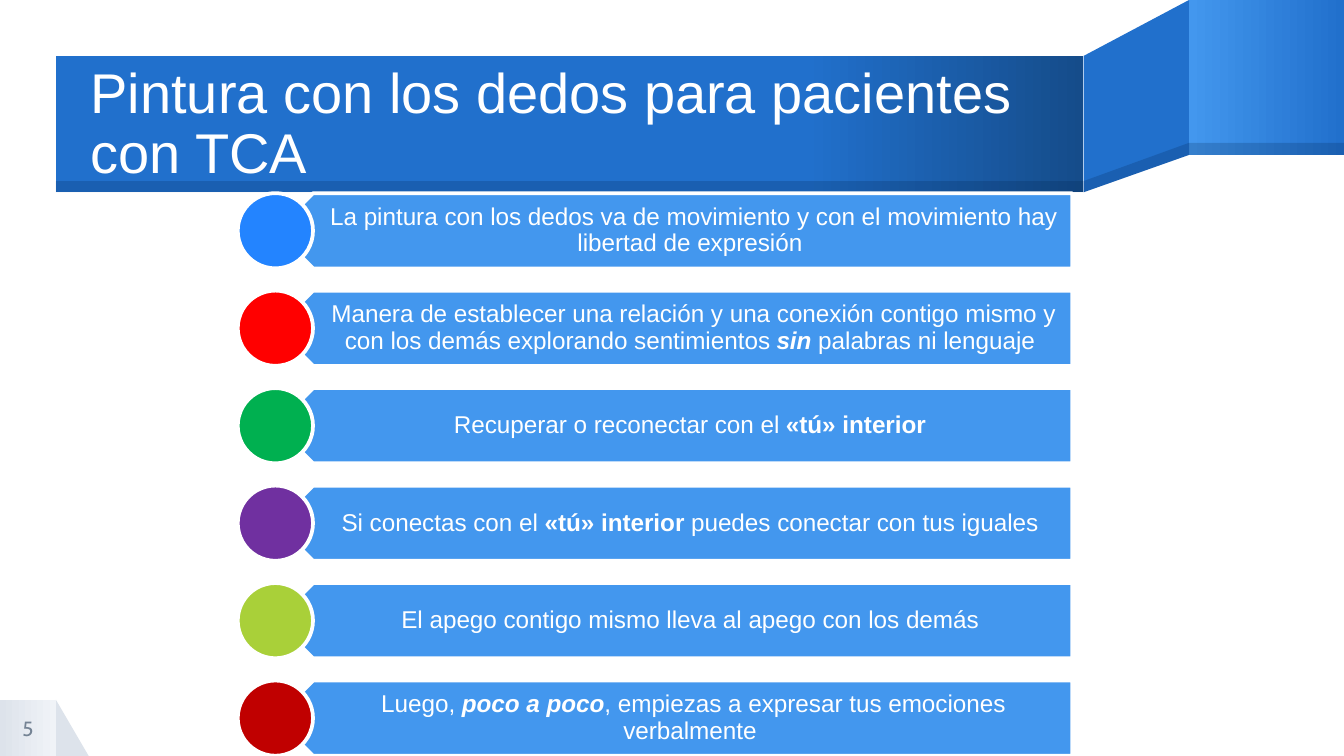
from lxml.etree import SubElement
from pptx import Presentation
from pptx.dml.color import RGBColor
from pptx.enum.shapes import MSO_SHAPE
from pptx.enum.text import MSO_ANCHOR, MSO_AUTO_SIZE, PP_ALIGN
from pptx.oxml.ns import qn
from pptx.util import Pt

WHITE, BLUE, SKY, NAVY, SHADE = "FFFFFF", "2170CC", "4397EE", "154C8A", "001F46"

ROWS = [
    ("2384FF", [("La pintura con los dedos va de movimiento y con el movimiento "
                 "hay libertad de expresión ", "")]),
    ("FF0000", [("Manera de establecer una relación y una conexión contigo mismo "
                 "y con los demás explorando sentimientos ", ""),
                ("sin", "bi"), (" palabras ni lenguaje ", "")]),
    ("00B050", [("Recuperar o reconectar con el ", ""), ("«tú» interior ", "b")]),
    ("7030A0", [("Si conectas con el ", ""), ("«tú» interior", "b"),
                (" puedes conectar con tus iguales ", "")]),
    ("A9D039", [("El apego contigo mismo lleva al apego con los demás ", "")]),
    ("C00000", [("Luego, ", ""), ("poco a poco", "bi"),
                (", empiezas a expresar tus emociones verbalmente ", "")]),
]


def color(code):
    return RGBColor.from_string(code)


def paint(shape, fill, line=None, alpha=None):
    shape.shadow.inherit = False
    shape.fill.solid()
    shape.fill.fore_color.rgb = color(fill)
    if alpha:
        tint = shape._element.spPr.find(".//" + qn("a:srgbClr"))
        SubElement(tint, qn("a:alpha"), val=str(alpha * 1000))
    if line:
        shape.line.color.rgb = color(line)
        shape.line.width = Pt(2)
    else:
        shape.line.fill.background()
    return shape


def blend(shape, stops):
    """Fill from left to right with (percent, colour) stops."""
    shape.fill.gradient()
    shape.fill.gradient_angle = 0
    ramp = shape._element.spPr.find(".//" + qn("a:gsLst"))
    ramp.clear()
    for place, code in stops:
        stop = SubElement(ramp, qn("a:gs"), pos=str(place * 1000))
        SubElement(stop, qn("a:srgbClr"), val=code)


def add(slide, kind, box, fill, line=None, alpha=None):
    shape = slide.shapes.add_shape(kind, *map(Pt, box))
    return paint(shape, fill, line, alpha)


def outline(slide, points, fill, alpha=None):
    start, *rest = [(Pt(x), Pt(y)) for x, y in points]
    build = slide.shapes.build_freeform(*start)
    build.add_line_segments(rest)
    paint(build.convert_to_shape(), fill, alpha=alpha)


def format_text(shape, pads, size, font, code, align, space):
    frame = shape.text_frame
    frame.word_wrap = True
    frame.auto_size = MSO_AUTO_SIZE.NONE
    frame.vertical_anchor = MSO_ANCHOR.MIDDLE
    (frame.margin_left, frame.margin_top,
     frame.margin_right, frame.margin_bottom) = map(Pt, pads)
    para = frame.paragraphs[0]
    para.alignment, para.line_spacing = align, space
    para.font.size, para.font.name = Pt(size), font
    para.font.color.rgb = color(code)


def add_corner(slide, left, top, side, number):
    box = left, top, side, side
    add(slide, MSO_SHAPE.RIGHT_TRIANGLE, (left + side, top, 17.5, side), "DDE3EB")
    tile = add(slide, MSO_SHAPE.RECTANGLE, box, "DDE3EB")
    blend(tile, [(0, "DDE3EB"), (100, "F0F3F7")])
    label = slide.shapes.add_textbox(*map(Pt, box))
    label.text_frame.text = number
    format_text(label, (0,) * 4, 11, "Cabin", "748394", PP_ALIGN.CENTER, 1)


def add_ribbon(slide, left, top, width, height):
    """Banner whose right end folds up to the top edge of its box."""
    fold, tail = left + 550.5, left + 607
    band, end, low = top + 30, top + 83, top + height
    edge, rise = 6, 6.5
    outline(slide, [(tail, top), (fold, band), (fold, low), (tail, end)], BLUE)
    flap = add(slide, MSO_SHAPE.RECTANGLE,
               (tail, top, left + width - tail, end - top), BLUE)
    blend(flap, [(0, SKY), (100, BLUE)])
    bar = add(slide, MSO_SHAPE.RECTANGLE, (left, band, fold - left, low - band), BLUE)
    blend(bar, [(0, BLUE), (73, BLUE), (100, NAVY)])
    outline(slide, [(tail, end - rise), (fold, low - edge), (fold, low), (tail, end)],
            SHADE, 20)
    for x, y, wide, high in [(tail, end - rise, left + width - tail, rise),
                             (left, low - edge, fold - left, edge)]:
        add(slide, MSO_SHAPE.RECTANGLE, (x, y, wide, high), SHADE, alpha=20)


def add_title(slide, left, top, width, height, text):
    title = slide.shapes.title
    title.left, title.top, title.width, title.height = map(
        Pt, (left, top, width, height))
    title.text_frame.text = text
    format_text(title, (0,) * 4, 30, "Arial", WHITE, PP_ALIGN.LEFT, 0.9)
    slide.shapes._spTree.append(title._element)  # bring to front


def add_rows(slide, left, top, width, height):
    size = 40.3
    step = (height - size) / (len(ROWS) - 1)
    for i, (dot, runs) in enumerate(ROWS):
        y = top + i * step
        plate = add(slide, MSO_SHAPE.PENTAGON,
                    (left + size / 2, y, width - size / 2, size), SKY, WHITE)
        plate.rotation = 180
        label = slide.shapes.add_textbox(
            *map(Pt, (left + 30.2, y, width - 30.2, size)))
        para = label.text_frame.paragraphs[0]
        for text, style in runs:
            run = para.add_run()
            run.text = text
            if "b" in style:
                run.font.bold = True
            if "i" in style:
                run.font.italic = True
        format_text(label, (17.8, 3.6, 7.2, 3.6), 13, "Arial", WHITE,
                    PP_ALIGN.CENTER, 0.9)
        add(slide, MSO_SHAPE.OVAL, (left, y, size, size), dot, WHITE)


def main():
    deck = Presentation()
    deck.slide_width, deck.slide_height = Pt(720), Pt(405)
    slide = deck.slides.add_slide(deck.slide_layouts[5])
    add_corner(slide, 0, 375, 30, "5")
    add_ribbon(slide, 30, 0, 690, 103)
    add_title(slide, 48.5, 31, 532, 72.5,
              "Pintura con los dedos para pacientes con TCA")
    add_rows(slide, 127.4, 103.5, 447, 301.4)
    deck.save("out.pptx")


if __name__ == "__main__":
    main()
